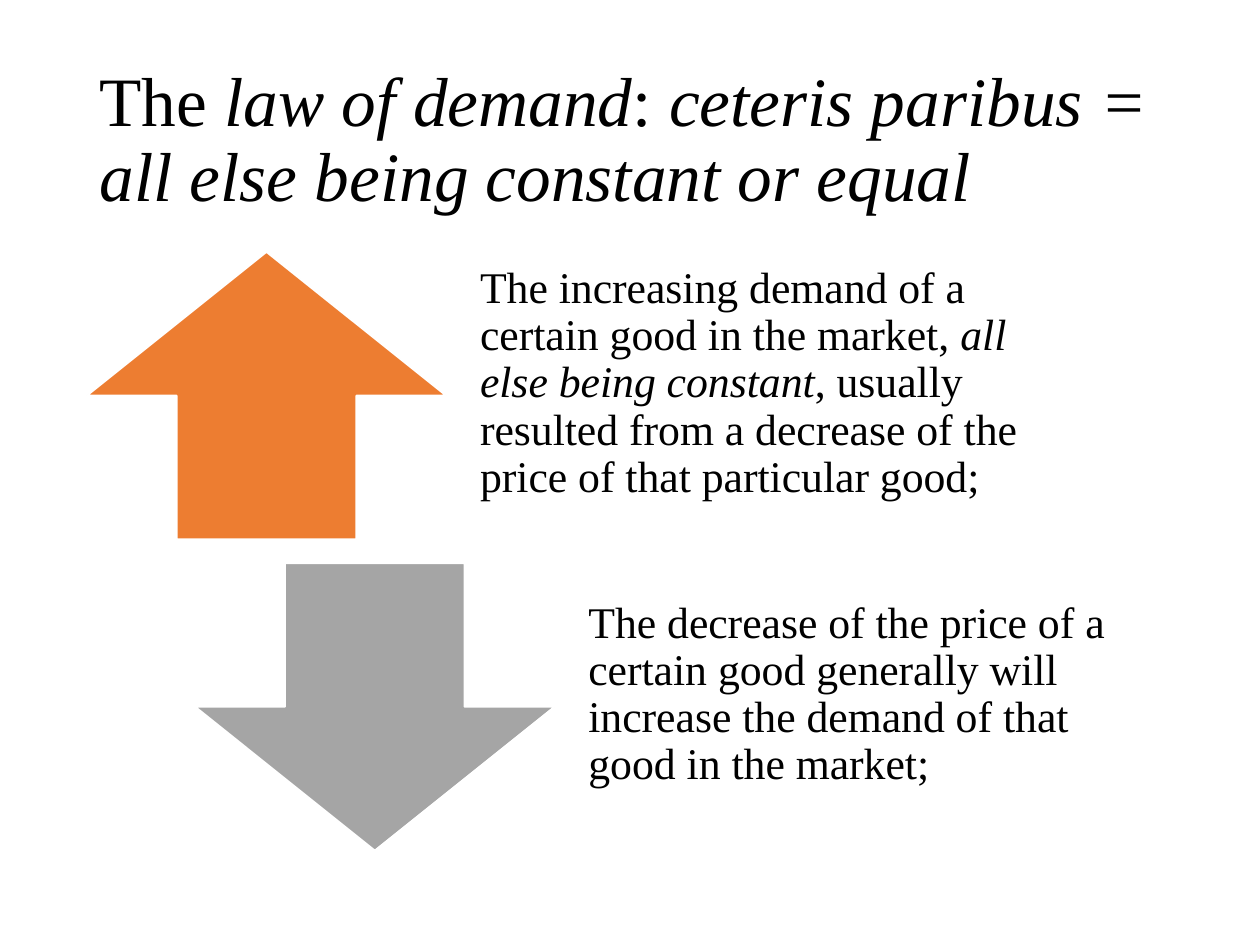
from pptx import Presentation
from pptx.dml.color import RGBColor
from pptx.enum.shapes import MSO_SHAPE
from pptx.enum.text import MSO_ANCHOR, MSO_AUTO_SIZE, PP_ALIGN
from pptx.util import Inches, Pt

FONT = "Times New Roman"
ARROW_WIDTH, TEXT_WIDTH, ROW_HEIGHT = 2.85, 4.83, 2.28
TEXT_OFFSET = 2.93
INSET = 0.19

TITLE = [
    ("The ", False),
    ("law of demand", True),
    (": ", False),
    ("ceteris paribus = all else being constant or equal", True),
]
ROWS = [
    (0.69, 2, MSO_SHAPE.UP_ARROW, "ED7D31", [
        ("The increasing demand of a certain good in the market, ", False),
        ("all else being constant", True),
        (", usually resulted from a decrease of the price of that particular good;", False),
    ]),
    (1.55, 4.47, MSO_SHAPE.DOWN_ARROW, "A5A5A5", [
        ("The decrease of the price of a certain good generally will increase "
         "the demand of that good in the market;", False),
    ]),
]


def color(hex_value):
    return RGBColor.from_string(hex_value)


def write_text(text_frame, runs, size):
    """Fill the frame with one paragraph of (text, italic) runs."""
    text_frame.word_wrap = True
    text_frame.auto_size = MSO_AUTO_SIZE.NONE
    text_frame.vertical_anchor = MSO_ANCHOR.MIDDLE
    paragraph = text_frame.paragraphs[0]
    paragraph.alignment = PP_ALIGN.LEFT
    paragraph.line_spacing = 0.9
    paragraph.font.name = FONT
    paragraph.font.size = Pt(size)
    paragraph.font.color.rgb = color("000000")
    for text, italic in runs:
        run = paragraph.add_run()
        run.text = text
        run.font.name = FONT
        run.font.italic = italic


def set_title(slide, runs):
    title = slide.shapes.title
    title.left, title.top = Inches(0.69), Inches(0.4)
    title.width, title.height = Inches(8.62), Inches(1.45)
    write_text(title.text_frame, runs, 39.6)


def add_arrow(slide, left, top, kind, fill):
    arrow = slide.shapes.add_shape(
        kind, Inches(left), Inches(top), Inches(ARROW_WIDTH), Inches(ROW_HEIGHT))
    arrow.shadow.inherit = False
    arrow.fill.solid()
    arrow.fill.fore_color.rgb = color(fill)
    arrow.line.color.rgb = color("FFFFFF")
    arrow.line.width = Pt(1)


def add_statement(slide, left, top, runs):
    box = slide.shapes.add_textbox(
        Inches(left), Inches(top), Inches(TEXT_WIDTH), Inches(ROW_HEIGHT))
    text_frame = box.text_frame
    text_frame.margin_left = text_frame.margin_right = Inches(INSET)
    text_frame.margin_top, text_frame.margin_bottom = 0, Inches(INSET)
    write_text(text_frame, runs, 25)


def main():
    presentation = Presentation()
    presentation.slide_width, presentation.slide_height = Inches(10), Inches(7.5)
    slide = presentation.slides.add_slide(presentation.slide_layouts[5])
    set_title(slide, TITLE)
    for left, top, kind, fill, runs in ROWS:
        add_arrow(slide, left, top, kind, fill)
        add_statement(slide, left + TEXT_OFFSET, top, runs)
    presentation.save("out.pptx")


if __name__ == "__main__":
    main()
